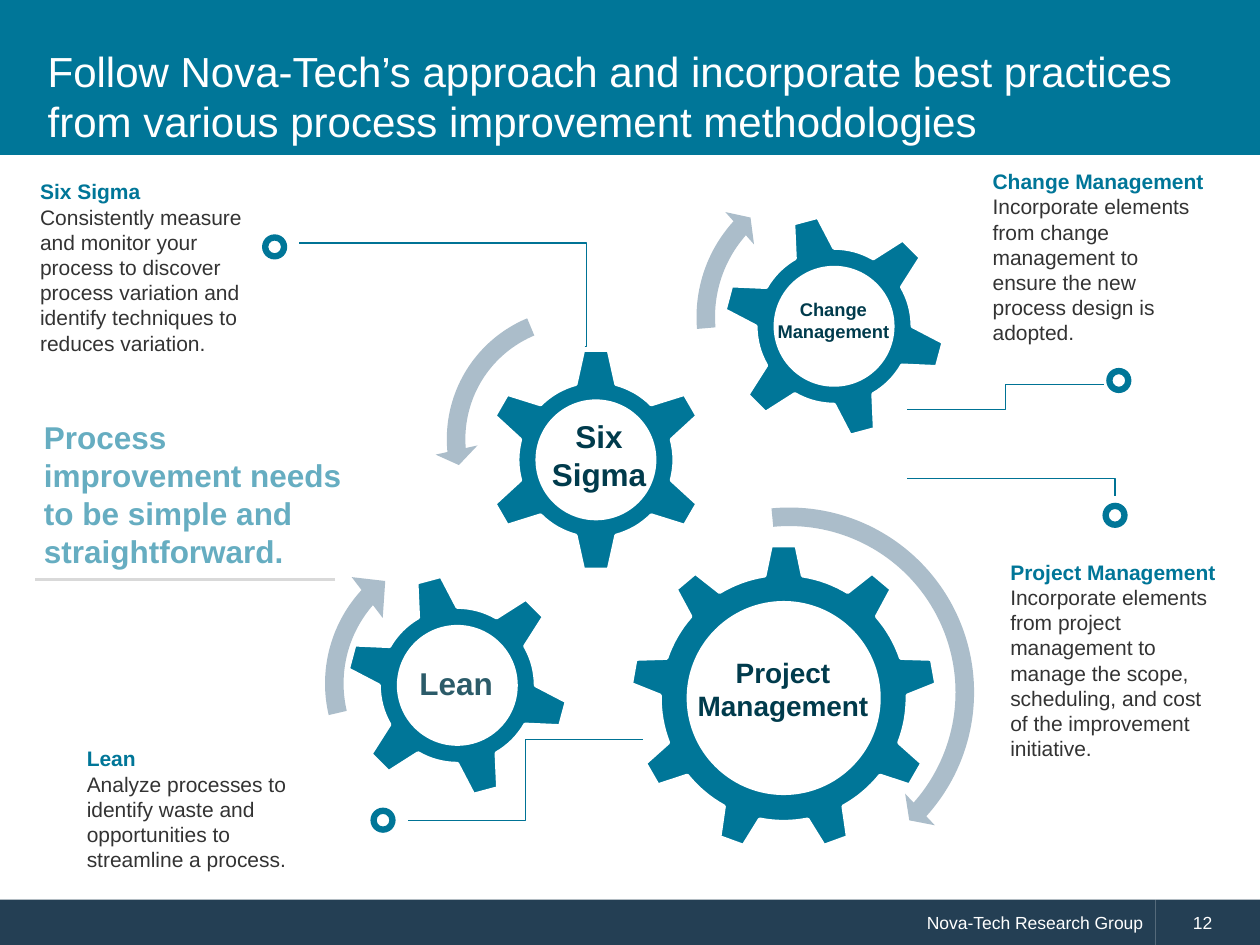
import math
import pptx
import pptx.dml.color
import pptx.enum.shapes
import pptx.enum.text
import pptx.oxml.ns
import pptx.util

Inches = pptx.util.Inches
Pt = pptx.util.Pt
SHAPE = pptx.enum.shapes.MSO_SHAPE
ALIGN = pptx.enum.text.PP_ALIGN
MIDDLE = pptx.enum.text.MSO_ANCHOR.MIDDLE

COLORS = {
    "teal": "007698", "navy": "243F54", "white": "FFFFFF", "arrow": "ABBDCA",
    "leader": "007395", "body": "333333", "label": "003B4C", "lean": "2B5B69",
    "callout": "66ADC1", "rule": "D9D9D9",
}


def rgb(name):
    return pptx.dml.color.RGBColor.from_string(COLORS[name])


class SlideBuilder:
    """Holds the slide and the font shared by all of its text."""

    font_name = "Arial"

    def __init__(self, slide):
        self.slide = slide

    def finish(self, shape, fill):
        shape.shadow.inherit = False
        shape.fill.solid()
        shape.fill.fore_color.rgb = rgb(fill)
        shape.line.fill.background()
        return shape

    def shape(self, kind, box, fill, adjustments=()):
        shape = self.slide.shapes.add_shape(kind, *map(Inches, box))
        for index, value in enumerate(adjustments):
            shape.adjustments[index] = value
        return self.finish(shape, fill)

    def fill_text(self, frame, paragraphs, align=ALIGN.LEFT, anchor=None):
        """Fill a frame from (text, size, color, bold) tuples."""
        frame.word_wrap = True
        if anchor is not None:
            frame.vertical_anchor = anchor
        for index, (text, size, color, bold) in enumerate(paragraphs):
            paragraph = frame.add_paragraph() if index else frame.paragraphs[0]
            paragraph.alignment = align
            run = paragraph.add_run()
            run.text = text
            style = {"name": self.font_name, "size": Pt(size), "bold": bold}
            for attribute, value in style.items():
                setattr(run.font, attribute, value)
            run.font.color.rgb = rgb(color)

    def text(self, box, paragraphs, **layout):
        textbox = self.slide.shapes.add_textbox(*map(Inches, box))
        self.fill_text(textbox.text_frame, paragraphs, **layout)

    def footer(self, box, text, align, **indent):
        bar = self.shape(SHAPE.RECTANGLE, box, "navy")
        self.fill_text(bar.text_frame, [(text, 10, "white", False)], align, MIDDLE)
        properties = bar.text_frame.paragraphs[0]._p.get_or_add_pPr()
        for side, length in indent.items():
            properties.set(side, str(Inches(length)))

    def gear(self, center, teeth, tip, root, turn=0):
        """Outline a gear; tip and root are (half width, distance from center)."""
        ring = math.hypot(*root)
        root_angle = math.degrees(math.atan2(*root))
        tip_angle = math.degrees(math.atan2(*tip))
        step = 360 / teeth
        valley = step - 2 * root_angle
        valley_steps = 8
        points = []

        def add_point(radius, degrees):
            angle = math.radians(degrees + turn)
            points.append((Inches(center[0] + radius * math.sin(angle)),
                           Inches(center[1] - radius * math.cos(angle))))

        for tooth in range(teeth):
            middle = tooth * step
            for side in (-1, 1):
                add_point(math.hypot(*tip), middle + side * tip_angle)
            for index in range(valley_steps + 1):
                add_point(ring, middle + root_angle + valley * index / valley_steps)
        outline = self.slide.shapes.build_freeform(*points[0])
        outline.add_line_segments(points[1:], close=True)
        gear = self.finish(outline.convert_to_shape(), "teal")
        gear.line.color.rgb = rgb("white")
        gear.line.width = Pt(2)

    def hub(self, center, diameter):
        left, top = (value - diameter / 2 for value in center)
        self.shape(SHAPE.OVAL, (left, top, diameter, diameter), "white")

    def connector(self, start, end, color="leader", width=0.75,
                  preset="bentConnector3", bend=None):
        line = self.slide.shapes.add_connector(
            pptx.enum.shapes.MSO_CONNECTOR.ELBOW, *map(Inches, start + end))
        line.line.color.rgb = rgb(color)
        line.line.width = Pt(width)
        properties = line._element.spPr
        geometry = properties.find(pptx.oxml.ns.qn("a:prstGeom"))
        geometry.set("prst", preset)
        if bend is not None:
            guides = geometry.find(pptx.oxml.ns.qn("a:avLst"))
            guide = guides.makeelement(
                pptx.oxml.ns.qn("a:gd"),
                {"name": "adj1", "fmla": f"val {round(bend * 100000)}"})
            guides.append(guide)
        properties.append(properties.makeelement(pptx.oxml.ns.qn("a:effectLst"), {}))


def main():
    deck = pptx.Presentation()
    deck.slide_width, deck.slide_height = Inches(10), Inches(7.5)
    page = SlideBuilder(deck.slides.add_slide(deck.slide_layouts[6]))

    page.footer((0, 7.14, 9.17, 0.37), "Nova-Tech Research Group", ALIGN.RIGHT,
                marL=0.29, indent=0)
    page.footer((9.17, 7.14, 0.83, 0.37), "12", ALIGN.LEFT, marL=0.2, indent=0)
    page.shape(SHAPE.RECTANGLE, (0, 0, 10, 1.23), "teal")
    page.text((0.28, 0.28, 9.43, 0.96), [(
        "Follow Nova-Tech’s approach and incorporate best practices "
        "from various process improvement methodologies", 24, "white", False)],
        anchor=MIDDLE)

    small_tooth = {"teeth": 6, "tip": (0.1, 0.87), "root": (0.16, 0.6)}
    six_sigma, change, lean, project = (
        (4.73, 3.65), (6.62, 2.59), (3.63, 5.44), (6.22, 5.54))
    page.gear(six_sigma, **small_tooth)
    page.gear(change, turn=-15, **small_tooth)
    page.gear(lean, turn=-15, **small_tooth)
    page.gear(project, teeth=9, tip=(0.1, 1.21), root=(0.15, 0.97))

    # Adjustments: thickness, head angle, end angle, start angle, head width
    for kind, left, top, size, adjustments in (
        (SHAPE.CIRCULAR_ARROW, 4.7, 3.93, 3.13, (0.047, 2.99, 25.13, 158.68, 0.055)),
        (SHAPE.LEFT_CIRCULAR_ARROW, 3.45, 2.35, 2.27, (0.065, 4.3, 104.89, 148.38, 0.075)),
        (SHAPE.CIRCULAR_ARROW, 5.43, 1.29, 2.45, (0.06, 3.94, 133.14, 105.08, 0.07)),
        (SHAPE.CIRCULAR_ARROW, 2.45, 4.2, 2.45, (0.06, 6.55, 133.14, 100.07, 0.083)),
    ):
        page.shape(kind, (left, top, size, size), "arrow", adjustments)

    for center in (six_sigma, change, lean):
        page.hub(center, 0.96)
    page.hub(project, 1.54)

    page.connector((4.64, 2.75), (2.37, 1.93), bend=-0.008)
    page.connector((5.1, 5.87), (3.24, 6.51))
    page.connector((7.2, 3.25), (8.76, 3.05))
    page.connector((7.2, 3.8), (8.85, 3.94), preset="bentConnector2")
    page.connector((2.66, 4.6), (0.28, 4.6), "rule", 2, "line")
    for left, top in ((2.08, 1.86), (2.94, 6.41), (8.78, 2.92), (8.75, 3.99)):
        page.shape(SHAPE.DONUT, (left, top, 0.2, 0.2), "teal")

    for box, method, advice in (
        ((0.22, 1.37, 1.97, 1.72), "Six Sigma",
         "Consistently measure and monitor your process to discover process "
         "variation and identify techniques to reduces variation."),
        ((0.59, 5.87, 2.15, 1.11), "Lean",
         "Analyze processes to identify waste and opportunities to streamline a process."),
        ((7.78, 1.29, 1.9, 1.72), "Change Management",
         "Incorporate elements from change management to ensure the new "
         "process design is adopted."),
        ((7.92, 4.39, 1.9, 1.92), "Project Management",
         "Incorporate elements from project management to manage the scope, "
         "scheduling, and cost of the improvement initiative."),
    ):
        page.text(box, [(method, 12, "teal", True), (advice, 12, "body", False)])

    page.text((0.25, 3.27, 2.69, 1.31), [(
        "Process improvement needs to be simple and straightforward.",
        18, "callout", True)])

    for box, label, size, color in (
        ((4.19, 3.26, 1.13, 0.71), "Six Sigma", 18, "label"),
        ((6.05, 2.32, 1.13, 0.45), "Change Management", 10.5, "label"),
        ((5.4, 5.15, 1.63, 0.64), "Project Management", 16, "label"),
        ((3.08, 5.22, 1.08, 0.4), "Lean", 18, "lean"),
    ):
        page.text(box, [(label, size, color, True)], align=ALIGN.CENTER)

    deck.save("out.pptx")


if __name__ == "__main__":
    main()
